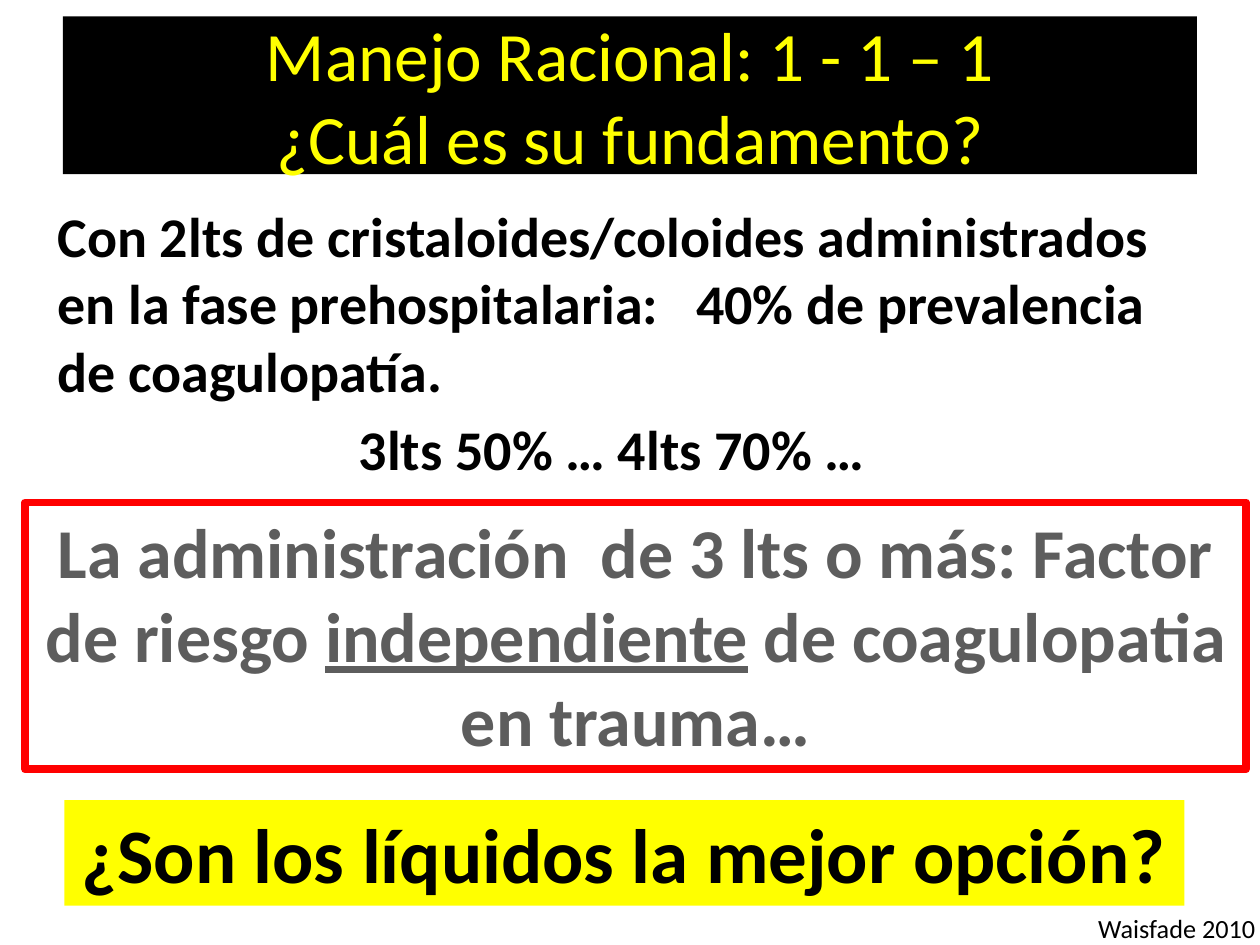
from dataclasses import dataclass
from typing import Optional

from pptx import Presentation
from pptx.dml.color import RGBColor
from pptx.enum.shapes import MSO_SHAPE
from pptx.enum.text import MSO_ANCHOR, PP_ALIGN
from pptx.util import Cm, Pt

COLORS = {
    "black": "000000",
    "yellow": "FFFF00",
    "red": "FF0000",
    "gray": "5D5D5D",
}
FONT = "Calibri"


@dataclass
class Line:
    texts: tuple[str, ...]
    align: PP_ALIGN = PP_ALIGN.CENTER
    underlined: Optional[int] = None


@dataclass
class Block:
    left: float
    top: float
    width: float
    height: float
    lines: tuple[Line, ...]
    size: float
    color: str = "black"
    bold: bool = True
    fill: Optional[str] = None
    border: Optional[str] = None
    anchor: MSO_ANCHOR = MSO_ANCHOR.TOP
    wrap: bool = True
    space_before: float = 0


BLOCKS = (
    Block(1.27, 0.33, 22.86, 3.18,
          (Line(("Manejo Racional: 1 - 1 – 1\v¿Cuál es su fundamento?",)),),
          39.6, color="yellow", bold=False, fill="black", anchor=MSO_ANCHOR.MIDDLE),
    Block(0.91, 3.94, 22.86, 9.8,
          (Line(("Con 2lts de cristaloides/coloides administrados en la fase "
                 "prehospitalaria:   40% de prevalencia de coagulopatía.",), PP_ALIGN.LEFT),
           Line(("3lts 50% … 4lts 70% …",))),
          32, space_before=6.4),
    Block(21.89, 18.26, 3.81, 0.89,
          (Line(("Waisfade 2010",), PP_ALIGN.LEFT),), 15, bold=False),
    Block(0.51, 10.13, 24.61, 5.38,
          (Line(("La administración  de 3 lts o más: Factor de riesgo ",
                 "independiente", " de coagulopatia en trauma…"), underlined=1),),
          40, color="gray", border="red"),
    Block(1.3, 16.13, 22.58, 2.13,
          (Line(("¿Son los líquidos la mejor opción?",)),),
          44, fill="yellow", wrap=False),
)


def rgb(name: str) -> RGBColor:
    return RGBColor.from_string(COLORS[name])


def add_line(p, line: Line, block: Block) -> None:
    p.text = line.texts[0]
    for text in line.texts[1:]:
        p.add_run().text = text
    p.alignment = line.align
    p.space_before = Pt(block.space_before)
    for i, r in enumerate(p.runs):
        r.font.name = FONT
        r.font.size = Pt(block.size)
        r.font.bold = block.bold
        r.font.color.rgb = rgb(block.color)
        if i == line.underlined:
            r.font.underline = True


def add_block(s, block: Block) -> None:
    box = Cm(block.left), Cm(block.top), Cm(block.width), Cm(block.height)
    if block.fill or block.border:
        sp = s.shapes.add_shape(MSO_SHAPE.RECTANGLE, *box)
        sp.shadow.inherit = False
    else:
        sp = s.shapes.add_textbox(*box)
    if block.fill:
        sp.fill.solid()
        sp.fill.fore_color.rgb = rgb(block.fill)
    else:
        sp.fill.background()
    if block.border:
        sp.line.color.rgb = rgb(block.border)
        sp.line.width = Pt(4.5)
    else:
        sp.line.fill.background()
    tf = sp.text_frame
    tf.word_wrap = block.wrap
    tf.vertical_anchor = block.anchor
    for i, line in enumerate(block.lines):
        p = tf.add_paragraph() if i else tf.paragraphs[0]
        add_line(p, line, block)


def main() -> None:
    prs = Presentation()
    prs.slide_width, prs.slide_height = Cm(25.4), Cm(19.05)
    s = prs.slides.add_slide(prs.slide_layouts[6])
    for block in BLOCKS:
        add_block(s, block)
    prs.save("out.pptx")


if __name__ == "__main__":
    main()
